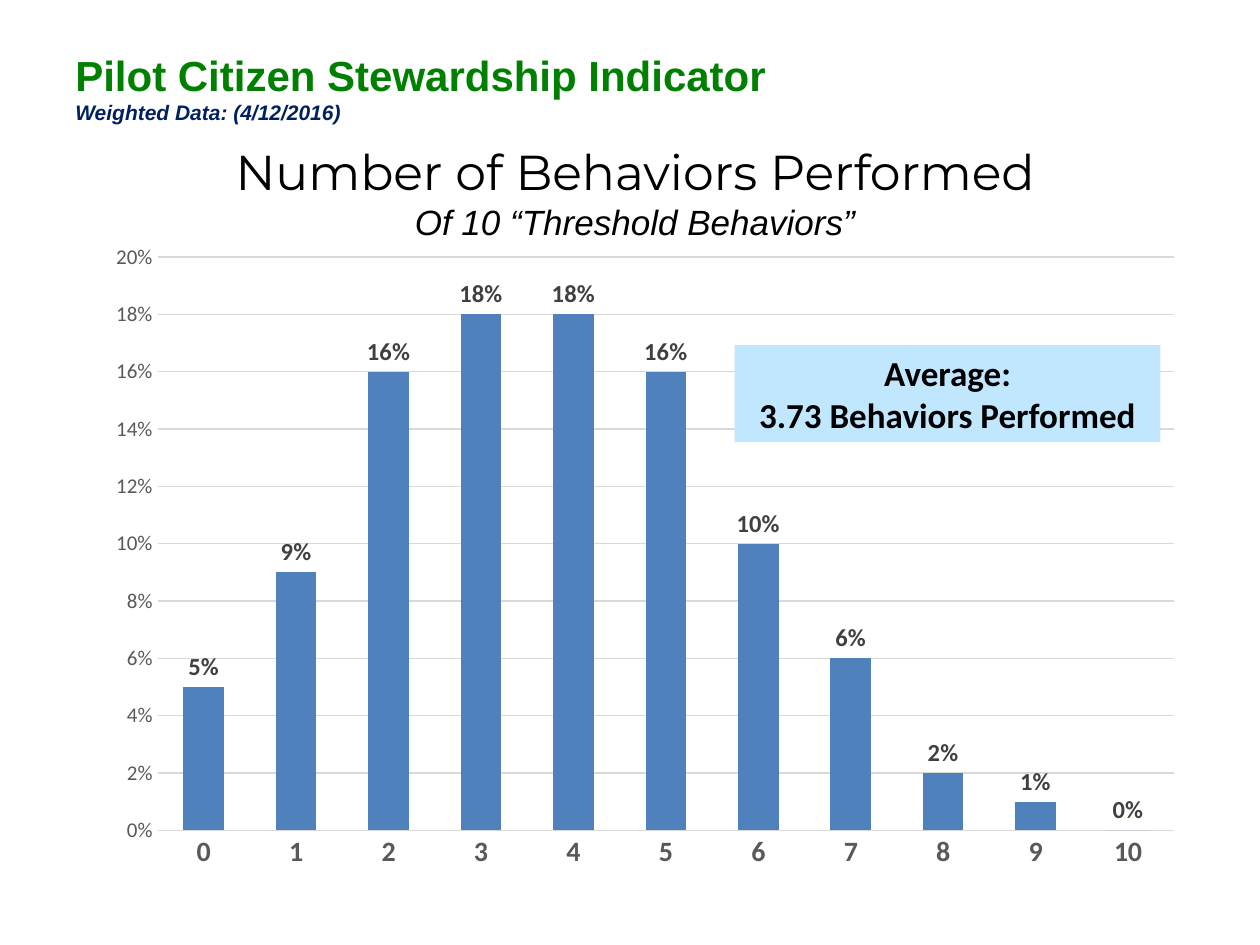
from dataclasses import dataclass

from lxml import etree
from pptx import Presentation
from pptx.chart.data import CategoryChartData
from pptx.dml.color import RGBColor
from pptx.enum.chart import XL_CHART_TYPE, XL_LABEL_POSITION, XL_TICK_MARK
from pptx.enum.shapes import MSO_SHAPE
from pptx.enum.text import MSO_ANCHOR, PP_ALIGN
from pptx.oxml.ns import qn
from pptx.util import Inches, Pt

COLUMNS = XL_CHART_TYPE.COLUMN_CLUSTERED
OUTSIDE_END = XL_LABEL_POSITION.OUTSIDE_END
NO_TICK = XL_TICK_MARK.NONE
RECTANGLE = MSO_SHAPE.RECTANGLE
MIDDLE = MSO_ANCHOR.MIDDLE
LEFT, CENTER = PP_ALIGN.LEFT, PP_ALIGN.CENTER

COLORS = {
    "heading": "008000",
    "date": "002060",
    "text": "000000",
    "axis": "595959",
    "grid": "D9D9D9",
    "bar": "4F81BD",
    "label": "404040",
    "callout": "C1E7FF",
}
SHARES = [0.05, 0.09, 0.16, 0.18, 0.18, 0.16, 0.1, 0.06, 0.02, 0.01, 0]


@dataclass
class Box:
    left: float
    top: float
    width: float
    height: float

    def lengths(self) -> list:
        return [Inches(v) for v in (self.left, self.top, self.width, self.height)]


@dataclass
class Line:
    text: str
    size: int
    font: str
    color: str
    bold: bool = False
    italic: bool = False


def format_font(font, size: int, name: str, color: str, bold=False, italic=False) -> None:
    values = {"size": Pt(size), "name": name, "bold": bold, "italic": italic}
    for attribute, value in values.items():
        setattr(font, attribute, value)
    font.color.rgb = RGBColor.from_string(COLORS[color])


def write_lines(frame, lines: list[Line], align, one_paragraph=False) -> None:
    frame.word_wrap = True
    frame.vertical_anchor = MIDDLE
    paragraph = frame.paragraphs[0]
    for index, line in enumerate(lines):
        if index and one_paragraph:
            paragraph.add_line_break()
        elif index:
            paragraph = frame.add_paragraph()
        paragraph.alignment = align
        run = paragraph.add_run()
        run.text = line.text
        format_font(run.font, line.size, line.font, line.color, line.bold, line.italic)


def format_grid_line(line) -> None:
    line.color.rgb = RGBColor.from_string(COLORS["grid"])
    line.width = Pt(0.75)


def place_plot(chart, box: Box, plot: Box) -> None:
    plot_area = chart.element.find(".//" + qn("c:plotArea"))
    for existing in plot_area.findall(qn("c:layout")):
        plot_area.remove(existing)
    layout = etree.Element(qn("c:layout"))
    manual = etree.SubElement(layout, qn("c:manualLayout"))
    settings = {
        "layoutTarget": "inner",
        "xMode": "edge",
        "yMode": "edge",
        "x": (plot.left - box.left) / box.width,
        "y": (plot.top - box.top) / box.height,
        "w": plot.width / box.width,
        "h": plot.height / box.height,
    }
    for tag, value in settings.items():
        etree.SubElement(manual, qn(f"c:{tag}")).set("val", str(value))
    plot_area.insert(0, layout)


def add_behavior_chart(slide, box: Box, plot_box: Box) -> None:
    data = CategoryChartData(number_format="0%")
    data.categories = [str(count) for count in range(len(SHARES))]
    data.add_series("Series 1", SHARES)
    chart = slide.shapes.add_chart(COLUMNS, *box.lengths(), data).chart
    chart.has_legend = False
    chart.has_title = False
    format_font(chart.font, 10, "Calibri", "text")
    place_plot(chart, box, plot_box)

    counts, shares = chart.category_axis, chart.value_axis
    for axis, size, bold in ((counts, 16, True), (shares, 12, False)):
        axis.major_tick_mark = axis.minor_tick_mark = NO_TICK
        format_font(axis.tick_labels.font, size, "Calibri", "axis", bold)
    format_grid_line(counts.format.line)
    format_grid_line(shares.major_gridlines.format.line)
    shares.format.line.fill.background()
    scale = {"minimum_scale": 0, "maximum_scale": 0.2, "major_unit": 0.02}
    for attribute, value in scale.items():
        setattr(shares, attribute, value)
    shares.tick_labels.number_format = "0%"
    shares.tick_labels.number_format_is_linked = False

    plot = chart.plots[0]
    bars = {"gap_width": 128, "overlap": -27, "vary_by_categories": False, "has_data_labels": True}
    for attribute, value in bars.items():
        setattr(plot, attribute, value)
    fill = plot.series[0].format.fill
    fill.solid()
    fill.fore_color.rgb = RGBColor.from_string(COLORS["bar"])
    labels = plot.data_labels
    label_format = {
        "show_value": True,
        "number_format": "0%",
        "number_format_is_linked": False,
        "position": OUTSIDE_END,
    }
    for attribute, value in label_format.items():
        setattr(labels, attribute, value)
    format_font(labels.font, 14, "Calibri", "label", True)


def add_callout(slide, box: Box, lines: list[Line]) -> None:
    callout = slide.shapes.add_shape(RECTANGLE, *box.lengths())
    callout.shadow.inherit = False
    callout.fill.solid()
    callout.fill.fore_color.rgb = RGBColor.from_string(COLORS["callout"])
    callout.line.fill.background()
    write_lines(callout.text_frame, lines, CENTER)


def main() -> None:
    presentation = Presentation()
    presentation.slide_width, presentation.slide_height = Inches(10), Inches(7.5)
    slide = presentation.slides.add_slide(presentation.slide_layouts[5])

    heading = slide.shapes.add_textbox(*Box(0.5, 0.3, 9, 0.78).lengths())
    write_lines(heading.text_frame, [
        Line("Pilot Citizen Stewardship Indicator", 24, "Arial", "heading", bold=True),
        Line("Weighted Data: (4/12/2016)", 12, "Arial", "date", bold=True, italic=True),
    ], LEFT)

    title = slide.shapes.title
    title.left, title.top, title.width, title.height = Box(0.54, 1.05, 9, 0.95).lengths()
    write_lines(title.text_frame, [
        Line("Number of Behaviors Performed", 28, "Montserrat", "text"),
        Line("Of 10 “Threshold Behaviors”", 20, "Arial", "text", italic=True),
    ], CENTER, one_paragraph=True)

    add_behavior_chart(slide, Box(0.75, 1.84, 8.75, 5.16), Box(1.25, 2.04, 8.07, 4.55))
    add_callout(slide, Box(5.83, 2.74, 3.38, 0.77), [
        Line("Average:", 20, "Calibri", "text", bold=True),
        Line("3.73 Behaviors Performed", 20, "Calibri", "text", bold=True),
    ])
    presentation.save("out.pptx")


if __name__ == "__main__":
    main()
